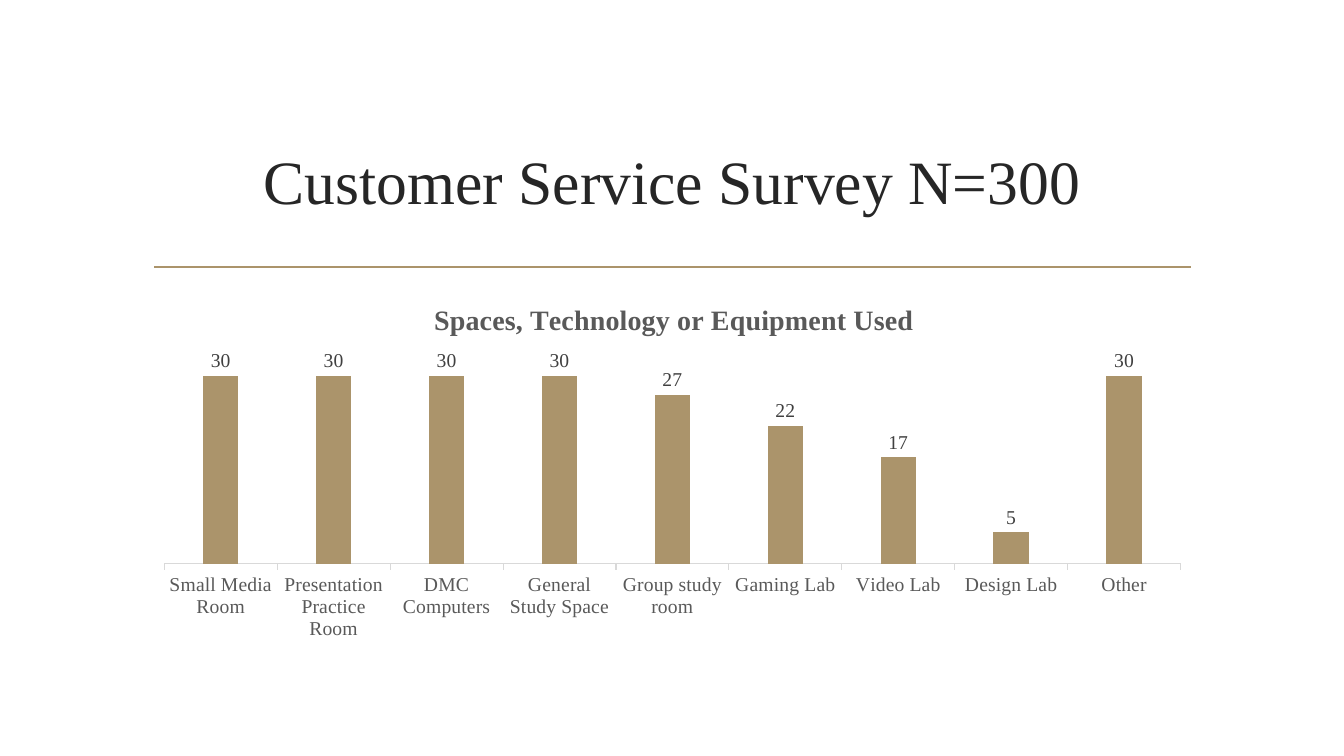
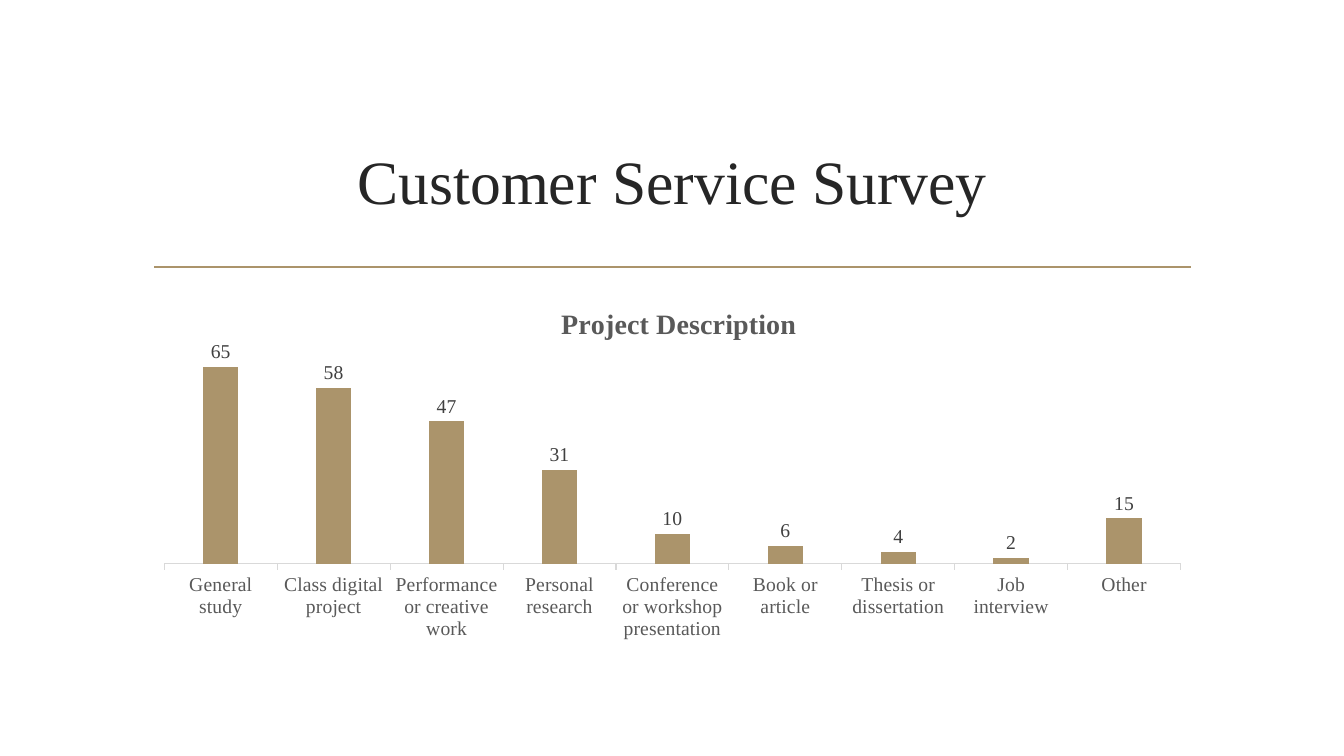
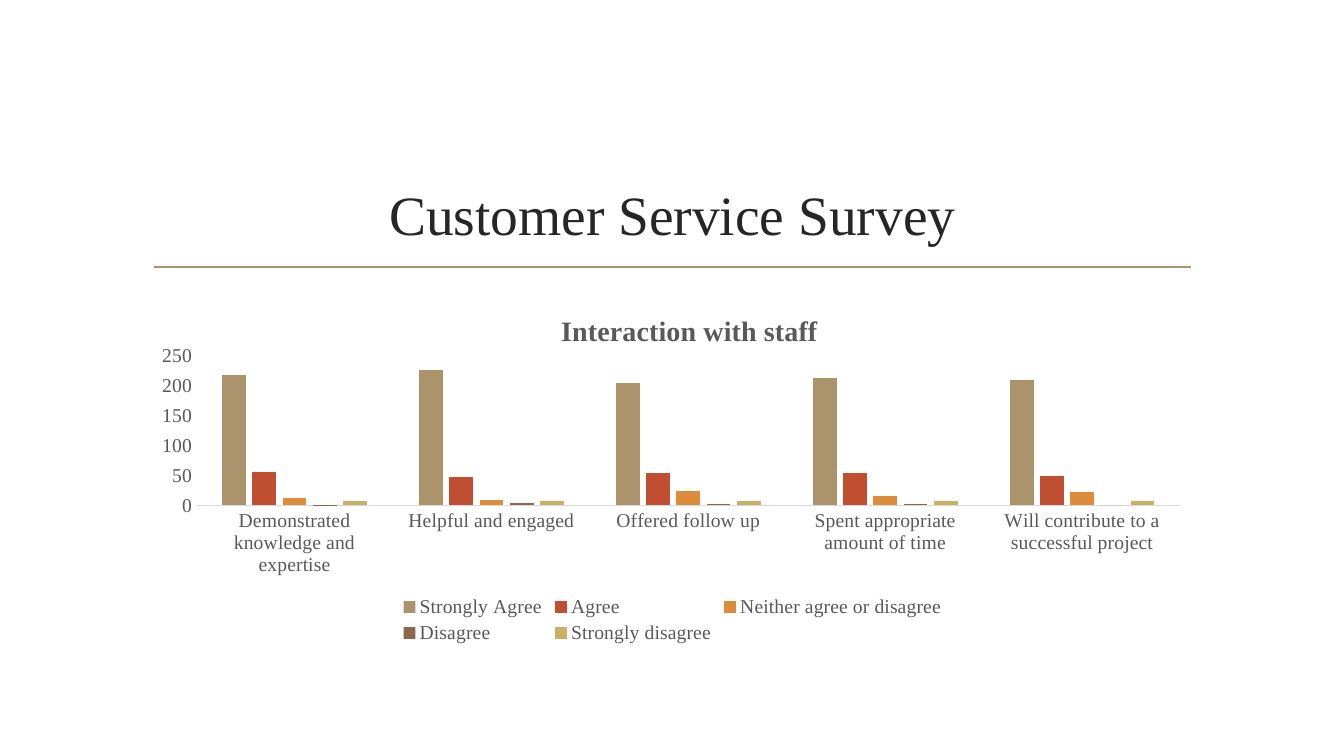
from dataclasses import dataclass
from lxml.etree import SubElement
from pptx import Presentation
from pptx.chart.data import CategoryChartData
from pptx.dml.color import RGBColor
from pptx.enum.chart import XL_CHART_TYPE as ChartType
from pptx.enum.chart import XL_LABEL_POSITION as LabelPosition
from pptx.enum.chart import XL_LEGEND_POSITION as LegendPosition
from pptx.enum.chart import XL_TICK_MARK as TickMark
from pptx.enum.shapes import MSO_CONNECTOR as Connector
from pptx.enum.text import MSO_ANCHOR as Anchor
from pptx.enum.text import PP_ALIGN as Align
from pptx.oxml.ns import qn
from pptx.util import Inches, Pt


@dataclass(frozen=True)
class Theme:
    """Colours, type sizes and regions shared by the slides."""
    font: str = "Times New Roman"
    title: str = "262626"
    axis_text: str = "595959"
    label_text: str = "404040"
    axis_line: str = "D9D9D9"
    accents: tuple = ("AB946B", "C04F32", "DD8C3C", "8E684C", "CBAF62")
    heading_size: float = 20
    chart_size: float = 14
    size: tuple = (13.33, 7.5)
    title_box: tuple = (1.42, 1.07, 10.5, 1.43)
    rule: tuple = (1.53, 2.65, 11.81, 2.65)
    chart_box: tuple = (1.42, 2.8, 10.5, 3.63)


THEME = Theme()

SURVEYS = [
    dict(title="Customer Service Survey N=300", size=44, anchor=Anchor.MIDDLE,
         heading="Spaces, Technology or Equipment Used", heading_at=(0.27, 0.04),
         plot=(0.02, 0.17, 0.96, 0.6), top=35,
         categories=["Small Media Room", "Presentation Practice Room", "DMC Computers",
                     "General Study Space", "Group study room", "Gaming Lab", "Video Lab",
                     "Design Lab", "Other"],
         series={"Series 1": [30, 30, 30, 30, 27, 22, 17, 5, 30]}),
    dict(title="Customer Service Survey", size=44, anchor=Anchor.MIDDLE,
         heading="Project Description", heading_at=(0.39, 0.05),
         plot=(0.02, 0.19, 0.96, 0.58), top=70,
         categories=["General study", "Class digital project", "Performance or creative work",
                     "Personal research", "Conference or workshop presentation",
                     "Book or article", "Thesis or dissertation", "Job interview", "Other"],
         series={"Series 1": [65, 58, 47, 31, 10, 6, 4, 2, 15]}),
    dict(title="Customer Service Survey", size=39.6, anchor=Anchor.BOTTOM,
         heading="Interaction with staff", heading_at=(0.39, 0.07),
         plot=(0.05, 0.2, 0.93, 0.41), top=250,
         categories=["Demonstrated knowledge and expertise", "Helpful and engaged",
                     "Offered follow up", "Spent appropriate amount of time",
                     "Will contribute to a successful project"],
         series={"Strongly Agree": [217, 226, 204, 213, 209],
                 "Agree": [56, 48, 54, 54, 49],
                 "Neither agree or disagree": [13, 9, 24, 16, 23],
                 "Disagree": [1, 4, 2, 2, 0],
                 "Strongly disagree": [7, 7, 7, 7, 7]}),
]


def inches(box):
    """Turn a tuple of inches into lengths."""
    return [Inches(length) for length in box]


def style_font(font, size, color, bold=False):
    """Apply the theme typeface with a size and a colour."""
    for name, value in dict(name=THEME.font, size=Pt(size), bold=bold).items():
        setattr(font, name, value)
    font.color.rgb = RGBColor.from_string(color)


def set_layout(parent, index, values, inner=False):
    """Place a chart part by shares of the chart's size."""
    for old in parent.findall(qn("c:layout")):
        parent.remove(old)
    layout = SubElement(parent, qn("c:layout"))
    parent.insert(index, layout)
    manual = SubElement(layout, qn("c:manualLayout"))
    settings = [("layoutTarget", "inner")] if inner else []
    settings += [("xMode", "edge"), ("yMode", "edge")]
    settings += zip("xywh", values)
    for tag, value in settings:
        SubElement(manual, qn(f"c:{tag}")).set("val", str(value))


def add_title(slide, box, survey):
    """Add the centred slide title."""
    frame = slide.shapes.add_textbox(*inches(box)).text_frame
    frame.word_wrap = True
    frame.vertical_anchor = survey["anchor"]
    paragraph = frame.paragraphs[0]
    paragraph.text = survey["title"]
    paragraph.alignment = Align.CENTER
    style_font(paragraph.runs[0].font, survey["size"], THEME.title)


def add_rule(slide, ends):
    """Add the line below the title."""
    rule = slide.shapes.add_connector(Connector.STRAIGHT, *inches(ends))
    rule.line.color.rgb = RGBColor.from_string(THEME.accents[0])
    rule.line.width = Pt(1.25)
    SubElement(rule._element.spPr, qn("a:effectLst"))


def style_axes(chart, top, single):
    """Format both axes; a single series hides its value axis."""
    for axis in (chart.category_axis, chart.value_axis):
        axis.has_major_gridlines = False
        axis.major_tick_mark = axis.minor_tick_mark = TickMark.NONE
        style_font(axis.tick_labels.font, THEME.chart_size, THEME.axis_text)
    line = chart.category_axis.format.line
    line.color.rgb = RGBColor.from_string(THEME.axis_line)
    line.width = Pt(0.75)
    if single:
        chart.category_axis.major_tick_mark = TickMark.OUTSIDE
    chart.value_axis.format.line.fill.background()
    chart.value_axis.minimum_scale, chart.value_axis.maximum_scale = 0, top
    chart.value_axis.visible = not single


def add_value_labels(plot):
    """Show each value above its column."""
    plot.has_data_labels = True
    labels = plot.data_labels
    labels.show_value = True
    labels.position = LabelPosition.OUTSIDE_END
    style_font(labels.font, THEME.chart_size, THEME.label_text)


def add_legend(chart):
    """Add the legend below the plot."""
    chart.has_legend = True
    chart.legend.position = LegendPosition.BOTTOM
    chart.legend.include_in_layout = False
    style_font(chart.legend.font, THEME.chart_size, THEME.axis_text)


def add_survey_chart(slide, box, survey):
    """Add the column chart with its heading."""
    data = CategoryChartData()
    data.categories = survey["categories"]
    for name, values in survey["series"].items():
        data.add_series(name, values)
    chart = slide.shapes.add_chart(ChartType.COLUMN_CLUSTERED, *inches(box), data).chart
    style_font(chart.font, 10, "000000")

    heading = chart.chart_title
    paragraph = heading.text_frame.paragraphs[0]
    paragraph.text = survey["heading"]
    style_font(paragraph.runs[0].font, THEME.heading_size, THEME.axis_text, bold=True)
    heading.include_in_layout = False
    set_layout(heading._element, 1, survey["heading_at"])

    plot = chart.plots[0]
    plot.gap_width, plot.overlap, plot.vary_by_categories = 219, -27, False
    set_layout(chart._chartSpace.chart.plotArea, 0, survey["plot"], inner=True)
    for series, color in zip(plot.series, THEME.accents):
        series.format.fill.solid()
        series.format.fill.fore_color.rgb = RGBColor.from_string(color)

    single = len(survey["series"]) == 1
    style_axes(chart, survey["top"], single)
    if single:
        chart.has_legend = False
        add_value_labels(plot)
    else:
        add_legend(chart)


def add_survey_slide(presentation, survey):
    """Add one survey slide: rule, title and chart."""
    slide = presentation.slides.add_slide(presentation.slide_layouts[6])
    add_rule(slide, THEME.rule)
    add_title(slide, THEME.title_box, survey)
    add_survey_chart(slide, THEME.chart_box, survey)


def main():
    """Build and save the presentation."""
    presentation = Presentation()
    presentation.slide_width, presentation.slide_height = inches(THEME.size)
    for survey in SURVEYS:
        add_survey_slide(presentation, survey)
    presentation.save("out.pptx")


if __name__ == "__main__":
    main()
